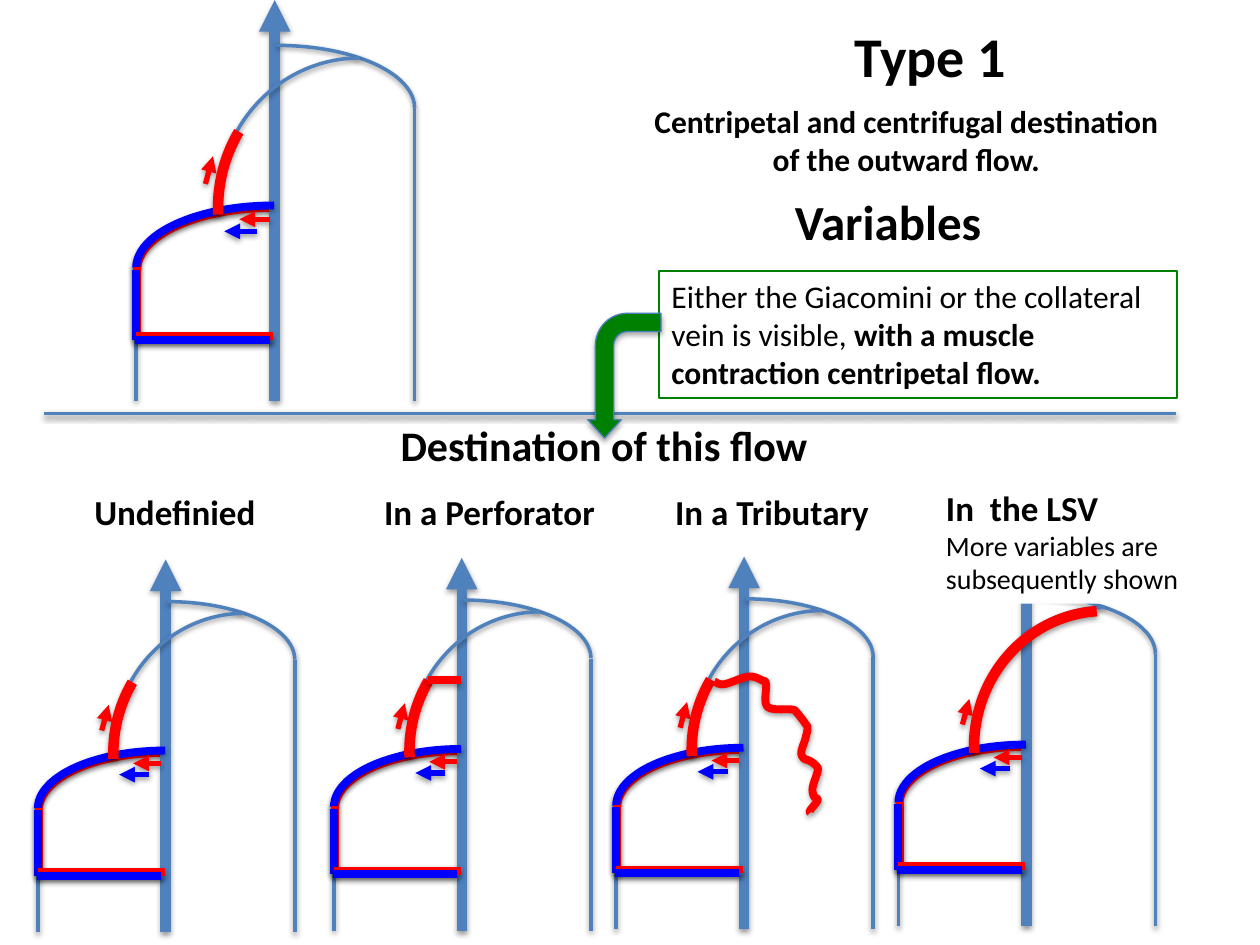
from pptx import Presentation
from pptx.dml.color import RGBColor
from pptx.enum import shapes, text
from pptx.oxml import ns, xmlchemy
from pptx.util import Pt

BLACK = RGBColor(0, 0, 0)
WHITE = RGBColor(255, 255, 255)
RED = RGBColor(255, 0, 0)
BLUE = RGBColor(0, 0, 255)
STEEL = RGBColor(0x4F, 0x81, 0xBD)
EDGE = RGBColor(0x4B, 0x7E, 0xBC)
GREEN = RGBColor(0, 128, 0)
KIND = shapes.MSO_SHAPE

# Text: box (left, top, width, height), wrap, paragraphs of (words, size, bold)
TITLE = ((481, 8.6, 103, 46), False, [[("Type 1", 32, True)]])
HEADS = [
    ((447.1, 105.8, 123.8, 41), False, [[("Variables", 28, True)]]),
    ((221.8, 236.2, 249.8, 36), False, [[("Destination of this flow", 24, True)]]),
    ((46.8, 276.5, 107.3, 31.7), False, [[("Undefinied", 20, True)]]),
    ((212.4, 276.5, 137.5, 31.7), False, [[("In a Perforator", 20, True)]]),
    ((378.7, 276.5, 127.4, 31.7), False, [[("In a Tributary", 20, True)]]),
]
FLOW = ((376.6, 154.8, 295.9, 72.7), True, [[
    ("Either the Giacomini or the collateral vein is visible, ", 18, False),
    ("with a muscle contraction centripetal flow.", 18, True)]])
LSV = ((533.5, 274.3, 165.6, 70.6), True, [
    [("In  the LSV", 20, True)],
    [("More variables are subsequently shown", 16, False)]])
NOTE = ((364.3, 54.7, 307.4, 51.1), True, [
    [("Centripetal and centrifugal destination of the outward flow.", 18, True)]])

# One leg, full size, measured from its left edge and the tip of the deep vein.
# Arc: box, flipped, angles, colour, width. Line: ends, colour, width, arrowhead.
TOP = (162, 0)
LOOP = (162, 1.63)
SHORT = (196.67, 1.63)
LONG = (164.05, 1.63)
LEG = [
    ("arc", (0.7, 118.8, 154, 70.5), True, TOP, RED, 4.5),
    ("line", (79.2, 0, 79.2, 229), STEEL, 6, "head"),
    ("arc", (1.4, 25.9, 157.7, 71.3), False, TOP, STEEL, 2),
    ("line", (159.1, 61.9, 159.1, 229), STEEL, 2, None),
    ("arc", (0, 117.4, 157.7, 71.3), True, TOP, BLUE, 4.5),
    ("line", (0, 152.6, 0, 229), STEEL, 2, None),
    ("line", (-0.7, 194.4, 78.5, 194.4), STEEL, 2, None),
    ("line", (76.3, 125.3, 59, 125.3), RED, 3, "tail"),
    ("line", (69.1, 132.2, 50.4, 132.2), BLUE, 3, "tail"),
    ("line", (0.7, 152.6, 0.7, 192.2), RED, 4.5, None),
    ("line", (0, 154.1, 0, 194.4), BLUE, 4.5, None),
    ("line", (0, 192.2, 78.5, 192.2), RED, 4.5, None),
    ("line", (-0.7, 194.4, 76.3, 194.4), BLUE, 4.5, None),
    ("arc", (46.8, 33.1, 162, 167), True, LOOP, STEEL, 2),
    ("line", (39.6, 105.1, 43.9, 89.3), RED, 3, "tail"),
]
BRANCH = ("line", (58.5, 75, 78.8, 75), RED, 4.5, None)
SMALL = (0.923, 0.93)
# Left, top, scale, angles of the red vein, extra parts
LEGS = [
    (77.8, 0, (1, 1), SHORT, []),
    (21.6, 319.7, SMALL, SHORT, []),
    (190.8, 318.8, SMALL, SHORT, [BRANCH]),
    (352.1, 318.1, SMALL, SHORT, []),
    (513.4, 316.3, SMALL, LONG, []),
]
RULE = (25.2, 236.2, 671.8, 236.2)
BENT = (321.1, 193.7, 71.3, 41.8)
WAVY = [
    (408.2, 389.5), (414, 391), (427.7, 386.6), (435.6, 388.8), (437.8, 391),
    (438.5, 403.9), (452.2, 405.4), (455, 406.8), (460.1, 413.3),
    (461.5, 416.2), (460.1, 422.6), (457.9, 429.8), (459.4, 433.4),
    (463, 434.9), (466.6, 437.8), (467.3, 440.6), (464.4, 450), (465.1, 455),
    (467.3, 457.2), (463, 463), (463, 464.4),
]


def write(shape, box, wrap, paras, align=text.PP_ALIGN.LEFT):
    shape.left, shape.top, shape.width, shape.height = map(Pt, box)
    frame = shape.text_frame
    frame.word_wrap = wrap
    frame.auto_size = text.MSO_AUTO_SIZE.SHAPE_TO_FIT_TEXT
    frame.vertical_anchor = text.MSO_ANCHOR.TOP
    for i, runs in enumerate(paras):
        para = frame.add_paragraph() if i else frame.paragraphs[0]
        para.alignment = align
        for words, size, bold in runs:
            run = para.add_run()
            run.text = words
            run.font.name = "Calibri"
            run.font.size = Pt(size)
            run.font.bold = bold
            run.font.color.rgb = BLACK


def label(slide, box, wrap, paras, align=text.PP_ALIGN.LEFT):
    shape = slide.shapes.add_textbox(*map(Pt, box))
    write(shape, box, wrap, paras, align)
    return shape


def stroke(shape, color, width):
    shape.line.color.rgb = color
    shape.line.width = Pt(width)


def soften(shape):
    """Use the theme's lightest shadow, the one connectors have."""
    shape.element.xpath(".//a:effectRef")[0].set("idx", "1")


def flip(shape, axis):
    shape.element.spPr.find(ns.qn("a:xfrm")).set(axis, "1")


def line(pool, ends, color, width, arrow=None):
    wire = pool.add_connector(shapes.MSO_CONNECTOR.STRAIGHT, *map(Pt, ends))
    stroke(wire, color, width)
    if arrow:
        tip = xmlchemy.OxmlElement(f"a:{arrow}End")
        tip.set("type", "triangle")
        wire.line._get_or_add_ln().append(tip)


def arc(pool, box, turned, angles, color, width):
    curve = pool.add_shape(KIND.ARC, *map(Pt, box))
    curve.adjustments[0], curve.adjustments[1] = angles
    curve.fill.background()
    stroke(curve, color, width)
    soften(curve)
    if turned:
        flip(curve, "flipH")


def leg(slide, left, top, scale, angles, extra):
    pool = slide.shapes.add_group_shape().shapes
    vein = ("arc", (46.8, 35.3, 162, 167), True, angles, RED, 6)
    sx, sy = scale
    for kind, (a, b, c, d), *look in LEG + [vein] + extra:
        a, b, c, d = a * sx + left, b * sy + top, c * sx, d * sy
        if kind == "arc":
            arc(pool, (a, b, c, d), *look)
        else:
            line(pool, (a, b, c + left, d + top), *look)


def smooth(points, steps=5):
    """Return points on a Catmull-Rom curve through the given ones."""
    pts = [points[0], *points, points[-1]]
    out = []
    for quad in zip(pts, pts[1:], pts[2:], pts[3:]):
        for k in range(1, steps + 1):
            t = k / steps
            out.append(tuple(
                Pt(b + t * (c - a) / 2 + t * t * (a - 2.5 * b + 2 * c - d / 2)
                   + t ** 3 * (1.5 * (b - c) + (d - a) / 2))
                for a, b, c, d in zip(*quad)))
    return out


def main():
    deck = Presentation()
    deck.slide_width, deck.slide_height = Pt(720), Pt(540)
    slide = deck.slides.add_slide(deck.slide_layouts[5])
    write(slide.shapes.title, *TITLE)
    stroke(label(slide, *FLOW), GREEN, 0.75)
    for part in LEGS:
        leg(slide, *part)
    line(slide.shapes, RULE, STEEL, 2)

    pen = slide.shapes.build_freeform(*map(Pt, WAVY[0]))
    pen.add_line_segments(smooth(WAVY), close=False)
    wave = pen.convert_to_shape()
    wave.fill.background()
    stroke(wave, RED, 4.5)
    soften(wave)

    for head in HEADS:
        label(slide, *head)
    card = label(slide, *LSV)
    card.fill.solid()
    card.fill.fore_color.rgb = WHITE

    bent = slide.shapes.add_shape(KIND.BENT_ARROW, *map(Pt, BENT))
    for i, value in enumerate((0.25, 0.23, 0.25, 0.44)):
        bent.adjustments[i] = value
    bent.rotation = 90
    flip(bent, "flipV")
    bent.fill.solid()
    bent.fill.fore_color.rgb = GREEN
    stroke(bent, EDGE, 0.75)
    label(slide, *NOTE, align=text.PP_ALIGN.CENTER)
    deck.save("out.pptx")


if __name__ == "__main__":
    main()
